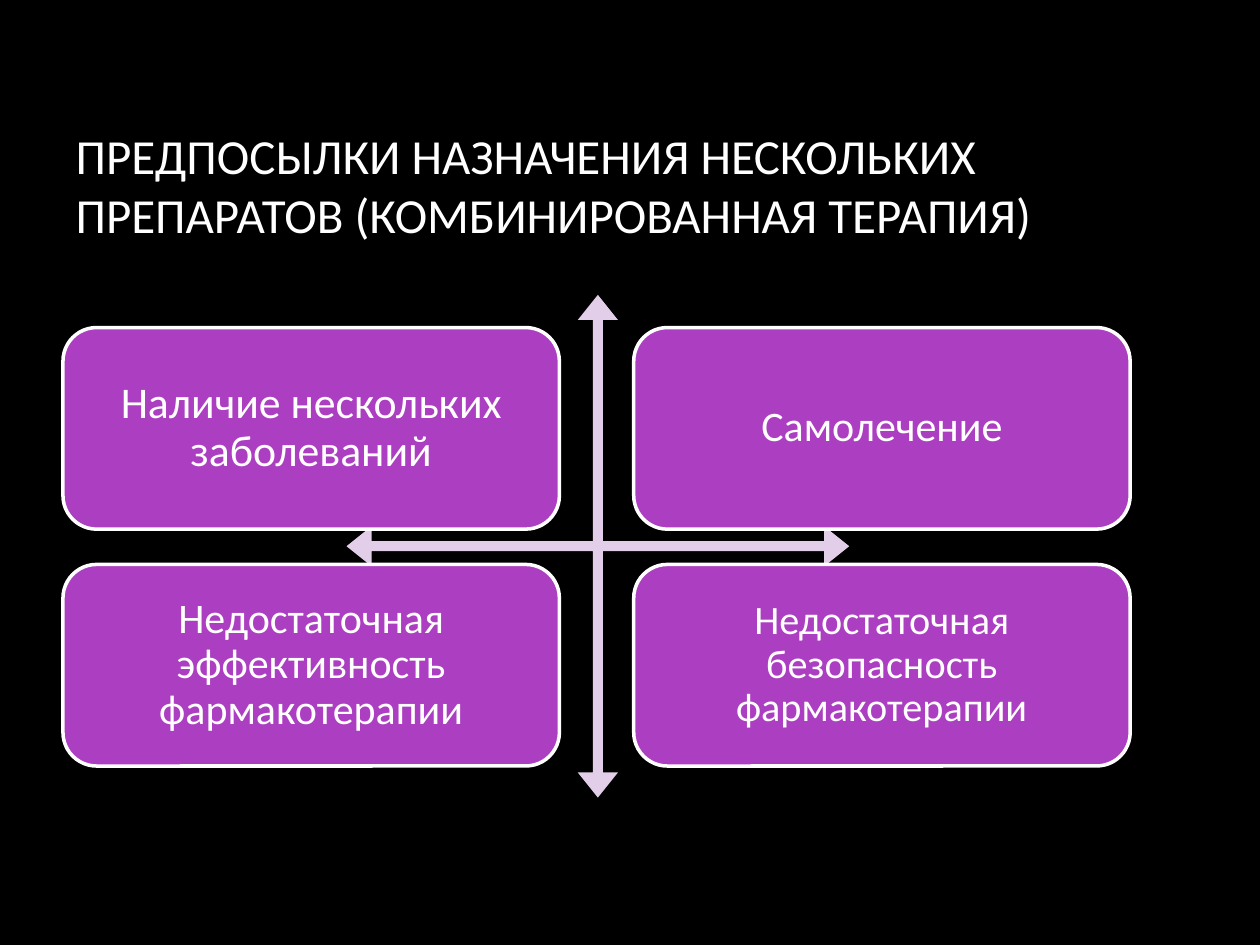
"""Build the slide on the reasons for prescribing several drugs."""
from dataclasses import dataclass

import pptx
import pptx.dml.color
import pptx.enum.shapes
import pptx.enum.text
import pptx.util

Inches = pptx.util.Inches
RGB = pptx.dml.color.RGBColor
SHAPE = pptx.enum.shapes.MSO_SHAPE
ALIGN = pptx.enum.text.PP_ALIGN
ANCHOR = pptx.enum.text.MSO_ANCHOR


@dataclass(frozen=True)
class Theme:
    font: str = "Calibri"
    background: RGB = RGB(0x00, 0x00, 0x00)
    text: RGB = RGB(0xFF, 0xFF, 0xFF)
    card: RGB = RGB(0xAC, 0x3E, 0xC1)
    arrow: RGB = RGB(0xE3, 0xCE, 0xE9)
    title_size: int = 28
    outline: int = 2


@dataclass(frozen=True)
class Reason:
    text: str
    size: int


THEME = Theme()
TITLE = "ПРЕДПОСЫЛКИ НАЗНАЧЕНИЯ НЕСКОЛЬКИХ ПРЕПАРАТОВ (КОМБИНИРОВАННАЯ ТЕРАПИЯ)"
REASONS = [
    Reason("Наличие нескольких заболеваний", 25),
    Reason("Самолечение", 24),
    Reason("Недостаточная эффективность фармакотерапии", 24),
    Reason("Недостаточная безопасность фармакотерапии", 23),
]
LEFT, TOP = 0.5, 2.6
CARD_W, CARD_H = 3.94, 1.6
STEP_X, STEP_Y = 4.53, 1.88
INSET = 0.18


def write(tf, text: str, size: int, align) -> None:
    """Write one formatted run into the first paragraph of a text frame."""
    tf.word_wrap = True
    tf.vertical_anchor = ANCHOR.MIDDLE
    p = tf.paragraphs[0]
    p.alignment = align
    r = p.add_run()
    r.text = text
    r.font.name = THEME.font
    r.font.size = pptx.util.Pt(size)
    r.font.color.rgb = THEME.text


def add_title(s) -> None:
    """Place and fill the title placeholder."""
    sp = s.shapes.title
    sp.left, sp.top = Inches(0.5), Inches(0.67)
    sp.width, sp.height = Inches(8.5), Inches(1.59)
    write(sp.text_frame, TITLE, THEME.title_size, ALIGN.LEFT)
    sp.text_frame.auto_size = pptx.enum.text.MSO_AUTO_SIZE.NONE


def add_filled(s, kind, x: float, y: float, w: float, h: float, color: RGB):
    """Add a flat preset shape without an outline."""
    sp = s.shapes.add_shape(kind, Inches(x), Inches(y), Inches(w), Inches(h))
    sp.shadow.inherit = False
    sp.fill.solid()
    sp.fill.fore_color.rgb = color
    sp.line.fill.background()
    return sp


def add_axes(s) -> None:
    """Add the four-way arrow between the cards."""
    sp = add_filled(s, SHAPE.QUAD_ARROW, 2.75, 2.34, 3.99, 3.99, THEME.arrow)
    for i, value in enumerate((0.02, 0.04, 0.05)):
        sp.adjustments[i] = value


def add_card(s, reason: Reason, row: int, col: int) -> None:
    """Add one outlined card at its place in the grid."""
    sp = add_filled(s, SHAPE.ROUNDED_RECTANGLE, LEFT + col * STEP_X,
                    TOP + row * STEP_Y, CARD_W, CARD_H, THEME.card)
    sp.line.color.rgb = THEME.text
    sp.line.width = pptx.util.Pt(THEME.outline)
    tf = sp.text_frame
    tf.margin_left = tf.margin_right = Inches(INSET)
    tf.margin_top = tf.margin_bottom = Inches(INSET)
    write(tf, reason.text, reason.size, ALIGN.CENTER)
    tf.paragraphs[0].line_spacing = 0.9


def main() -> None:
    """Build and save the presentation."""
    prs = pptx.Presentation()
    prs.slide_width, prs.slide_height = Inches(10), Inches(7.5)
    s = prs.slides.add_slide(prs.slide_layouts[5])
    s.background.fill.solid()
    s.background.fill.fore_color.rgb = THEME.background
    add_title(s)
    add_axes(s)
    for i, reason in enumerate(REASONS):
        add_card(s, reason, *divmod(i, 2))
    prs.save("out.pptx")


if __name__ == "__main__":
    main()
